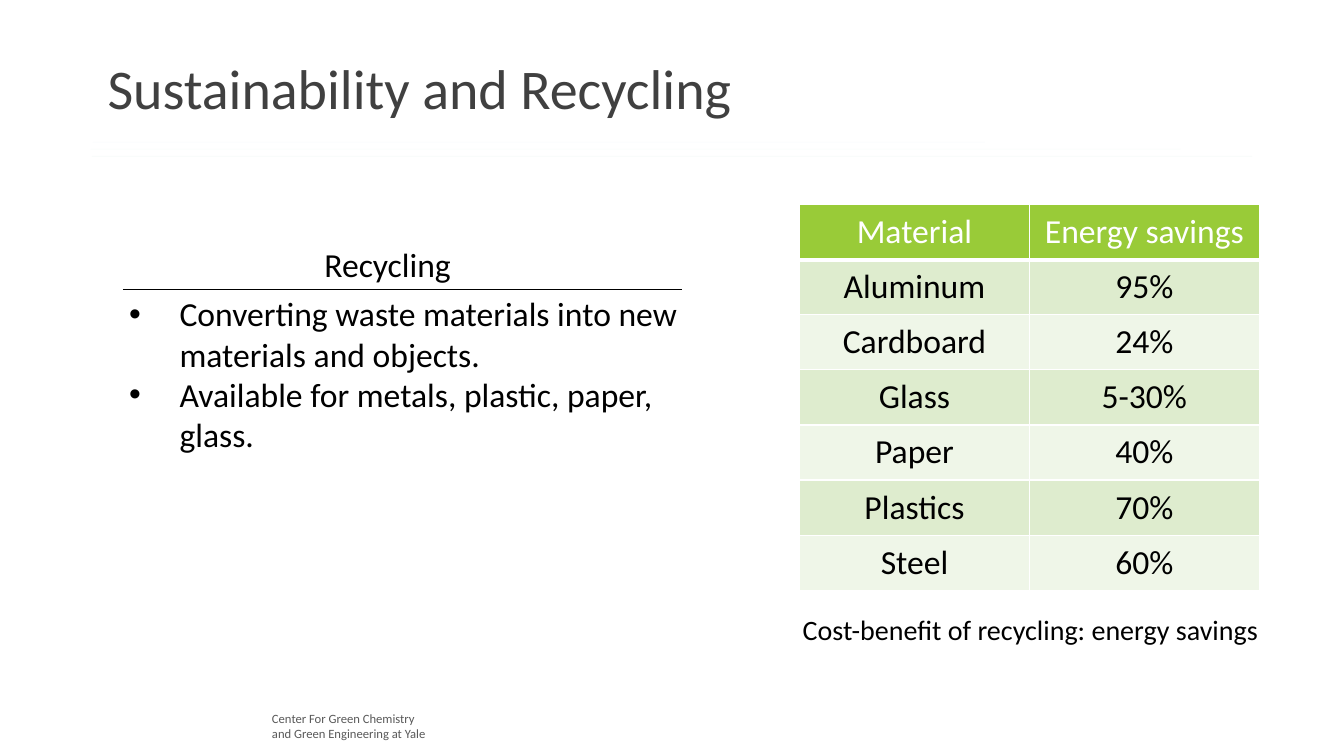
from dataclasses import dataclass
from lxml import etree
from pptx import Presentation
from pptx.dml.color import RGBColor
from pptx.enum.shapes import MSO_CONNECTOR
from pptx.enum.text import MSO_ANCHOR, MSO_AUTO_SIZE, PP_ALIGN
from pptx.oxml.ns import qn
from pptx.util import Inches, Pt

LINE = MSO_CONNECTOR.STRAIGHT
MID, TOP = MSO_ANCHOR.MIDDLE, MSO_ANCHOR.TOP
NO_FIT = MSO_AUTO_SIZE.NONE
LEFT, MIDDLE = PP_ALIGN.LEFT, PP_ALIGN.CENTER
WIDE, HIGH = Inches(13.33), Inches(7.5)


@dataclass(frozen=True)
class Theme:
    font: str = "Calibri"
    title: int = 40
    body: int = 24
    note: int = 20
    foot: int = 9
    ink: str = "000000"
    dark: str = "404040"
    gray: str = "595959"
    white: str = "FFFFFF"
    head: str = "99CB38"
    bands: tuple = ("DEECCE", "EFF6E8")
    rules: tuple = ("4EB3CF", "44C1A3", "37A76F")


THEME = Theme()
ROWS = [
    ("Material", "Energy savings"),
    ("Aluminum", "95%"),
    ("Cardboard", "24%"),
    ("Glass", "5-30%"),
    ("Paper", "40%"),
    ("Plastics", "70%"),
    ("Steel", "60%"),
]


def across(share):
    return round(WIDE * share / 100)


def down(share):
    return round(HIGH * share / 100)


def area(left, top, width, height):
    return across(left), down(top), across(width), down(height)


def write(para, text, size, color, align=LEFT):
    para.alignment = align
    run = para.add_run()
    run.text = text
    font = run.font
    font.name, font.size = THEME.font, Pt(size)
    font.color.rgb = RGBColor.from_string(color)


def pad(item):
    item.margin_left = item.margin_right = Inches(0.13)
    item.margin_top = item.margin_bottom = Inches(0.07)


def fill_text(shape, lines, size, color, align=LEFT, wrap=True, anchor=TOP):
    frame = shape.text_frame
    frame.word_wrap, frame.auto_size = wrap, NO_FIT
    frame.vertical_anchor = anchor
    for i, text in enumerate(lines):
        para = frame.add_paragraph() if i else frame.paragraphs[0]
        write(para, text, size, color, align)
    return frame


def move(shape, box):
    shape.left, shape.top, shape.width, shape.height = box
    return shape


def add_text(slide, box, *args, **opts):
    return fill_text(slide.shapes.add_textbox(*box), *args, **opts)


def add_list(shape, lines):
    frame = fill_text(shape, lines, THEME.body, THEME.ink)
    for para in frame.paragraphs:
        para.level = 1
        para.space_before = Pt(0)
        props = para._p.get_or_add_pPr()
        props.set("marL", str(Inches(1.17)))
        props.set("indent", str(Inches(-0.5)))
        etree.SubElement(props, qn("a:buFont")).set("typeface", "Arial")
        etree.SubElement(props, qn("a:buChar")).set("char", "•")


def add_rule(slide, left, right, top, color, alpha=None):
    rule = slide.shapes.add_connector(
        LINE, across(left), down(top), across(right), down(top))
    rule.line.width = Pt(0.5)
    rule.line.color.rgb = RGBColor.from_string(color)
    props = rule._element.spPr
    etree.SubElement(props, qn("a:effectLst"))
    if alpha:
        tone = props.find(".//" + qn("a:srgbClr"))
        etree.SubElement(tone, qn("a:alpha")).set("val", str(alpha * 1000))


def add_edges(cell, base):
    props = cell._tc.get_or_add_tcPr()
    for side, width in (("L", 1), ("R", 1), ("T", 1), ("B", base)):
        edge = etree.SubElement(props, qn("a:ln" + side), w=str(Pt(width)))
        paint = etree.SubElement(edge, qn("a:solidFill"))
        etree.SubElement(paint, qn("a:srgbClr"), val=THEME.white)


def add_grid(slide, box, rows):
    table = slide.shapes.add_table(len(rows), len(rows[0]), *box).table
    for r, row in enumerate(rows):
        back = THEME.bands[(r - 1) % 2] if r else THEME.head
        color = THEME.ink if r else THEME.white
        for c, text in enumerate(row):
            cell = table.cell(r, c)
            pad(cell)
            add_edges(cell, 1 if r else 3)
            cell.fill.solid()
            cell.fill.fore_color.rgb = RGBColor.from_string(back)
            write(cell.text_frame.paragraphs[0], text, THEME.body, color, MIDDLE)


def main():
    deck = Presentation()
    deck.slide_width, deck.slide_height = WIDE, HIGH
    slide = deck.slides.add_slide(deck.slide_layouts[1])
    title, body = slide.placeholders

    add_text(slide, area(19.5, 93.33, 13.95, 5.33),
             ["Center For Green Chemistry", "and Green Engineering at Yale"],
             THEME.foot, THEME.gray, wrap=False)
    spans = [(6.9, 73.29), (6.75, 87.85), (6.83, 93.17)]
    for i, (span, color) in enumerate(zip(spans, THEME.rules)):
        add_rule(slide, *span, 18.8 + i * 0.93, color, alpha=3)

    fill_text(move(title, area(6.23, 6.4, 49.96, 10.27)),
              ["Sustainability and Recycling"], THEME.title, THEME.dark,
              MIDDLE, wrap=False, anchor=MID)
    add_text(slide, area(23.33, 31.6, 11.03, 6.67), ["Recycling"],
             THEME.body, THEME.ink, MIDDLE, wrap=False)
    add_rule(slide, 9.15, 50.71, 38.27, THEME.ink)
    add_list(move(body, area(3.83, 38.13, 50.04, 22.93)), [
        "Converting waste materials into new materials and objects.",
        "Available for metals, plastic, paper, glass."])

    add_grid(slide, area(59.49, 27.07, 34.21, 50.53), ROWS)
    note = add_text(slide, area(57.54, 78.8, 38.26, 9.47),
                    ["Cost-benefit of recycling: energy savings"],
                    THEME.note, THEME.ink, MIDDLE, anchor=MID)
    pad(note)
    note.paragraphs[0].line_spacing = 0.9
    deck.save("out.pptx")


if __name__ == "__main__":
    main()
